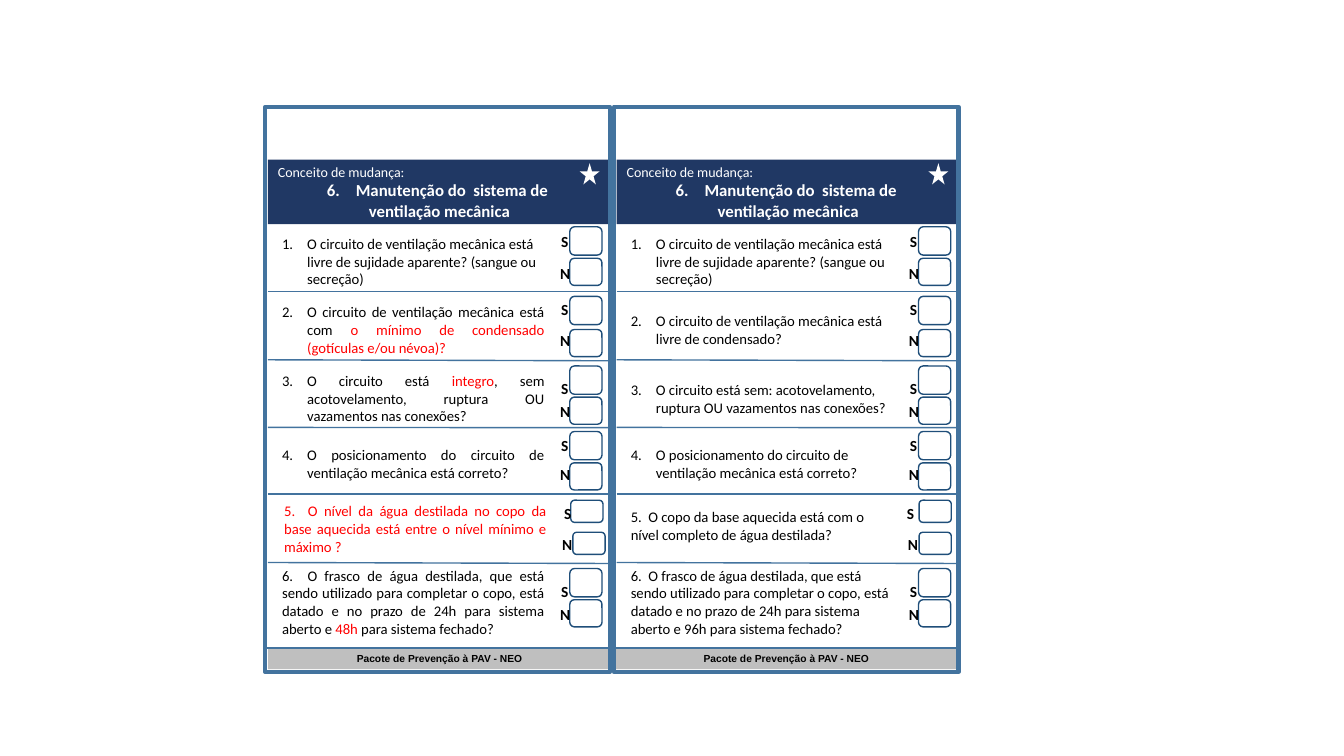
"""Build a slide with two ventilator care checklist cards side by side."""
import pptx
import pptx.dml.color
import pptx.enum.shapes
import pptx.enum.text
import pptx.oxml.ns
import pptx.util
from lxml import etree

Pt = pptx.util.Pt
Kind = pptx.enum.shapes.MSO_SHAPE
Align = pptx.enum.text.PP_ALIGN
Anchor = pptx.enum.text.MSO_ANCHOR

THEME = {
    "navy": "203864", "frame": "43739E", "box": "1F4E79", "gray": "BFBFBF",
    "ink": "000000", "red": "FF0000", "white": "FFFFFF",
    "body": "Calibri", "foot": "Arial",
    "small": 10, "title": 12, "ask": 10.5, "mark": 11, "note": 7.3,
}

FOOT = "Pacote de Prevenção à PAV - NEO"
HEAD = ("Conceito de mudança:", " Manutenção do  sistema de ", "ventilação mecânica")
STAR = 6

CARDS = [
    {
        "left": 189.4, "foot": 191.5, "rule": 189.4, "align": Align.JUSTIFY,
        "nudge": {"S": (0.7, 2.2), "N": (2.2, 1.4)}, "drop": 2.1,
        "asks": [
            [("O circuito de ventilação mecânica está livre de sujidade aparente? (sangue ou secreção)", "ink")],
            [("O circuito de ventilação mecânica está com ", "ink"),
             ("o mínimo de condensado (gotículas e/ou névoa)?", "red")],
            [("O circuito está ", "ink"), ("integro", "red"),
             (", sem acotovelamento, ruptura OU vazamentos nas conexões?", "ink")],
            [("O posicionamento do circuito de ventilação mecânica está correto?", "ink")],
            [("5.  O nível da água destilada no copo da base aquecida está entre o nível mínimo e máximo ?", "red")],
            [("6.  O frasco de água destilada, que está sendo utilizado para completar o copo, "
              "está datado e no prazo de 24h para sistema aberto e ", "ink"),
             ("48h", "red"), (" para sistema fechado?", "ink")],
        ],
    },
    {
        "left": 438.5, "foot": 439.2, "rule": 434.9, "align": None,
        "nudge": {"S": (0.4, -2), "N": (0.4, -0.7)}, "drop": 0,
        "asks": [
            [("O circuito de ventilação mecânica está livre de sujidade aparente? (sangue ou secreção)", "ink")],
            [("O circuito de ventilação mecânica está livre de condensado?", "ink")],
            [("O circuito está sem: acotovelamento, ruptura OU vazamentos nas conexões?", "ink")],
            [("O posicionamento do circuito de ventilação mecânica está correto?", "ink")],
            [("5.  O copo da base aquecida está com o nível completo de água destilada?", "ink")],
            [("6.  O frasco de água destilada, que está sendo utilizado para completar o copo, "
              "está datado e no prazo de 24h para sistema aberto e 96h para sistema fechado?", "ink")],
        ],
    },
]

ROWS = [
    {"ask": (164.2, 44.6), "S": (162, 20.2, 164.9), "N": (184.5, 19.4, 189.4)},
    {"ask": (213.1, 44.6), "S": (211.7, 20.2, 213.8), "N": (235.4, 19.4, 237.2)},
    {"ask": (262.1, 45), "S": (261.4, 20.2, 270), "N": (283.7, 19.4, 288)},
    {"ask": (313.5, 35.3), "S": (308.2, 20.2, 311), "N": (330.6, 19.4, 332.6)},
    {"ask": (362.9, 25.2), "S": (357.3, 15.8, 359.8), "N": (380.2, 15.8, 382.9)},
    {"ask": (414.7, 30.2), "S": (406.1, 20.2, 415.4), "N": (428.4, 19.4, 432.9)},
]
LINES = [(208.1, 208.1), (257, 257.7), (305.3, 305.5), (352.8, 352.8), (401.8, 402.5)]
MARKS = {"S": (204.3, 14.4), "N": (203.7, 12.2)}
LISTED = 4
NUDGED = 4

deck = pptx.Presentation()
deck.slide_width, deck.slide_height = Pt(960), Pt(540)
shapes = deck.slides.add_slide(deck.slide_layouts[6]).shapes


def tint(name):
    return pptx.dml.color.RGBColor.from_string(THEME[name])


def shape(kind, left, top, wide, high, fill=None, line=None, width=1):
    item = shapes.add_shape(kind, Pt(left), Pt(top), Pt(wide), Pt(high))
    item.shadow.inherit = False
    if fill:
        item.fill.solid()
        item.fill.fore_color.rgb = tint(fill)
    else:
        item.fill.background()
    if line:
        item.line.color.rgb = tint(line)
        item.line.width = Pt(width)
    else:
        item.line.fill.background()
    return item


def write(para, runs, size, bold=False, face="body", align=None):
    para.alignment = align
    for text, color in runs:
        run = para.add_run()
        run.text = text
        run.font.name = THEME[face]
        run.font.size = Pt(THEME[size])
        run.font.bold = bold
        run.font.color.rgb = tint(color)


def number(para, start):
    props = para._p.get_or_add_pPr()
    props.set("marL", str(Pt(18)))
    props.set("indent", str(Pt(-18)))
    auto = etree.SubElement(props, pptx.oxml.ns.qn("a:buAutoNum"))
    auto.set("type", "arabicPeriod")
    auto.set("startAt", str(start))


def label(left, top, wide, high):
    frame = shapes.add_textbox(Pt(left), Pt(top), Pt(wide), Pt(high)).text_frame
    frame.word_wrap = True
    frame.vertical_anchor = Anchor.MIDDLE
    return frame.paragraphs[0]


def rule(left, start, wide, end):
    line = shapes.add_connector(pptx.enum.shapes.MSO_CONNECTOR.STRAIGHT,
                                Pt(left), Pt(start), Pt(left + wide), Pt(end))
    line.line.color.rgb = tint("frame")
    line.line.width = Pt(1)
    etree.SubElement(line._element.spPr, pptx.oxml.ns.qn("a:effectLst"))


def footer(left):
    frame = shape(Kind.RECTANGLE, left, 462.2, 244.8, 15.8, "gray").text_frame
    frame.word_wrap = True
    frame.vertical_anchor = Anchor.TOP
    frame.auto_size = pptx.enum.text.MSO_AUTO_SIZE.SHAPE_TO_FIT_TEXT
    write(frame.paragraphs[0], [(FOOT, "ink")], "note", True, "foot", Align.CENTER)


def header(left):
    frame = shape(Kind.RECTANGLE, left + 2, 114, 245, 46.1, "navy").text_frame
    frame.word_wrap = True
    frame.vertical_anchor = Anchor.MIDDLE
    intro, name, rest = HEAD
    write(frame.paragraphs[0], [(intro, "white")], "small", align=Align.LEFT)
    for text in (name, rest):
        para = frame.add_paragraph()
        write(para, [(text, "white")], "title", True, align=Align.CENTER)
        if text == name:
            number(para, STAR)
    shape(Kind.STAR_5_POINT, left + 224.6, 116.6, 14.4, 15.1, "white")


def answer(left, row, mark, nudge):
    top, high, base = row[mark]
    shift, slide = nudge
    box = shape(Kind.ROUNDED_RECTANGLE, left + 217.6 + shift, top, 23, high, line="box")
    box.text_frame.word_wrap = True
    inset, tall = MARKS[mark]
    para = label(left + inset + slide, base, 17.3, tall)
    write(para, [(mark, "ink")], "mark", True, align=Align.CENTER)


def card(data):
    left = data["left"]
    header(left)
    shape(Kind.RECTANGLE, left, 76.3, 246.2, 403.7, line="frame", width=3)
    for start, end in LINES:
        rule(left + 2, start, 244.1, end)
    for spot, (row, runs) in enumerate(zip(ROWS, data["asks"])):
        odd = spot == NUDGED
        top, high = row["ask"]
        para = label(left + (6.5 if odd and data["drop"] else 5),
                     top + (data["drop"] if odd else 0), 201.6, high)
        write(para, runs, "ask", align=data["align"] if spot else None)
        if spot < LISTED:
            number(para, spot + 1)
        for mark in MARKS:
            answer(left, row, mark, data["nudge"][mark] if odd else (0, 0))


def main():
    for data in CARDS:
        footer(data["foot"])
    for data in CARDS:
        card(data)
    for data in CARDS:
        rule(data["rule"], 463, 247.7, 463)
    deck.save("out.pptx")


if __name__ == "__main__":
    main()
